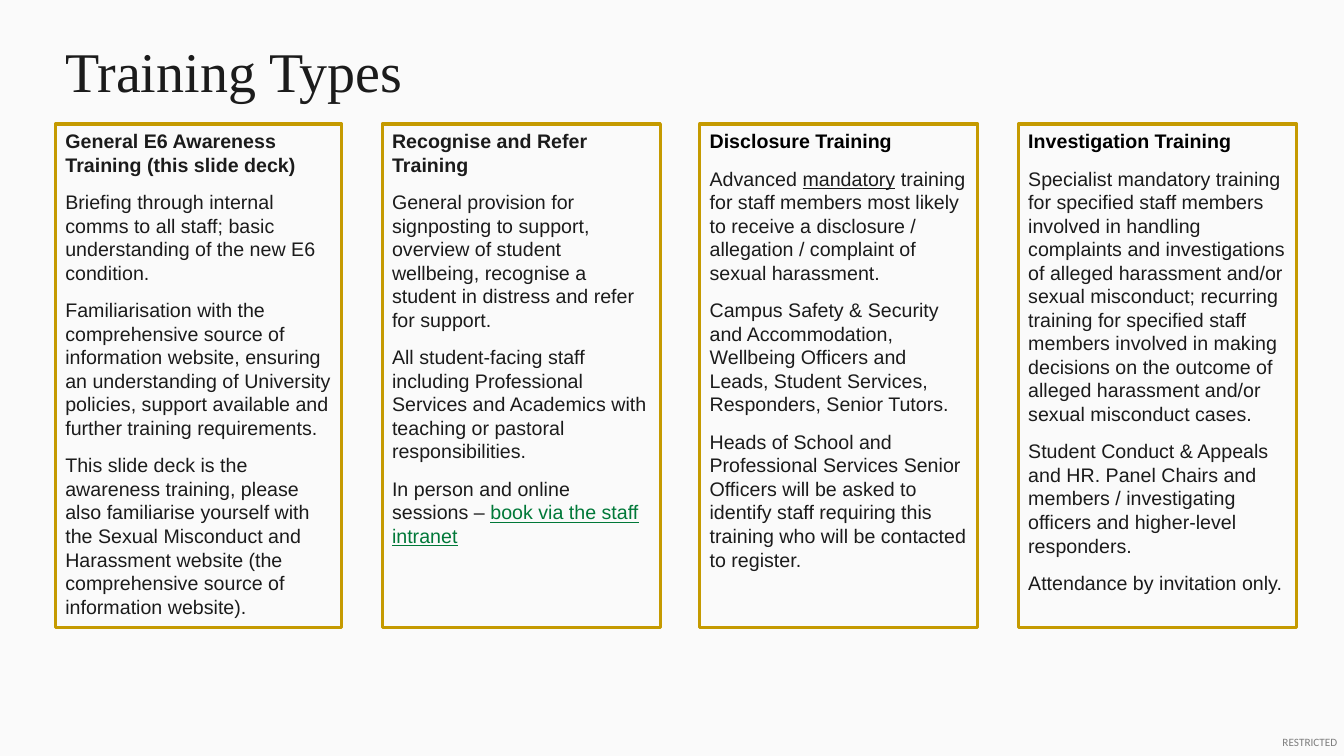
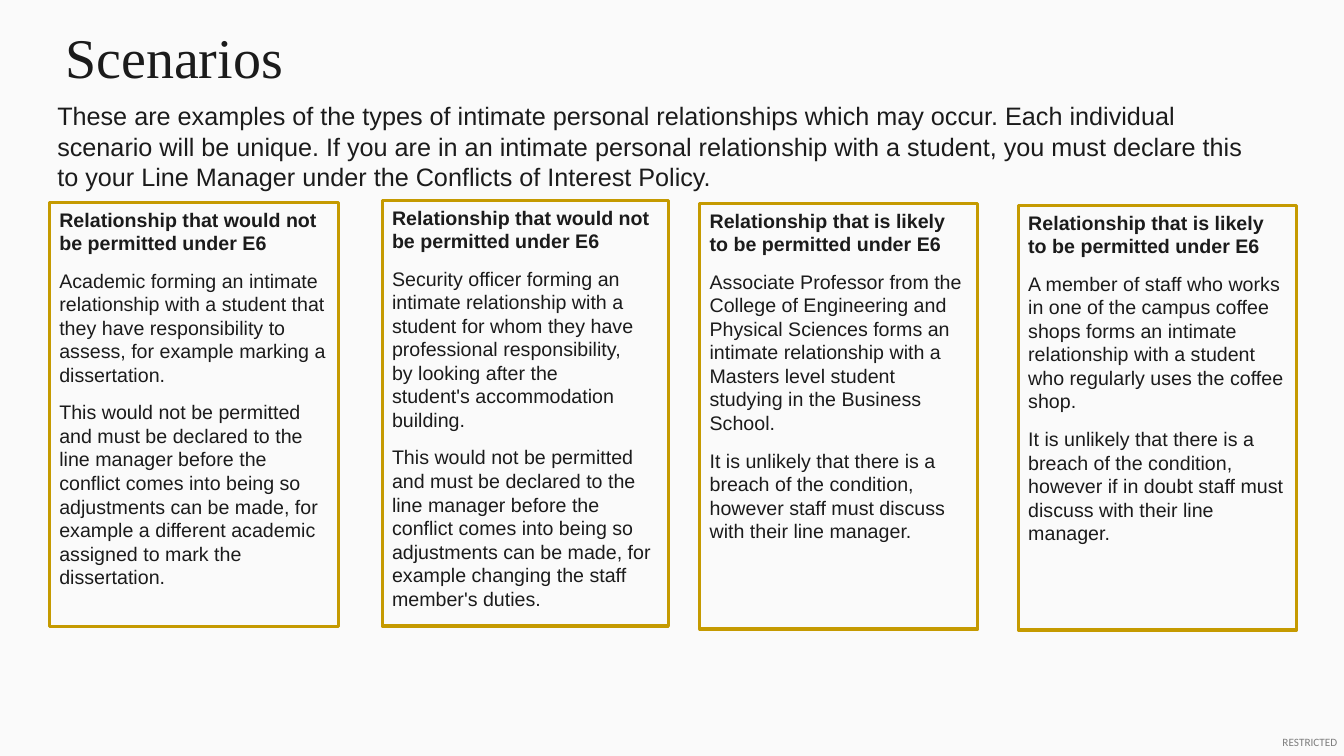
from pptx import Presentation
from pptx.dml.color import RGBColor
from pptx.enum.shapes import MSO_SHAPE
from pptx.enum.text import MSO_ANCHOR, PP_ALIGN
from pptx.util import Inches, Pt

COLORS = {
    "paper": "FAFAFA",
    "ink": "1B1B1B",
    "black": "000000",
    "gold": "C59A00",
    "link": "007838",
    "footer": "7D7D7D",
}
BODY_FONT = "Arial"
TITLE_FONT = "Times New Roman"
FOOTER_FONT = "Calibri"

TRAINING_CARDS = [
    ((0.55, 1.23, 2.84, 5), "ink", "General E6 Awareness Training (this slide deck)", [
        "Briefing through internal comms to all staff; basic understanding of the new E6 condition.",
        "Familiarisation with the comprehensive source of information website, ensuring an "
        "understanding of University policies, support available and further training requirements.",
        "This slide deck is the awareness training, please also familiarise yourself with the Sexual "
        "Misconduct and Harassment website (the comprehensive source of information website).",
    ]),
    ((3.79, 1.23, 2.76, 5), "ink", "Recognise and Refer Training", [
        "General provision for signposting to support, overview of student wellbeing, recognise a "
        "student in distress and refer for support.",
        "All student-facing staff including Professional Services and Academics with teaching or "
        "pastoral responsibilities.",
        [("In person and online sessions – ", None), ("book via the staff intranet", "link")],
    ]),
    ((6.94, 1.23, 2.76, 5), "black", "Disclosure Training", [
        [("Advanced ", None), ("mandatory", "ink"),
         (" training for staff members most likely to receive a disclosure / allegation / complaint "
          "of sexual harassment.", None)],
        "Campus Safety & Security and Accommodation, Wellbeing Officers and Leads, Student Services, "
        "Responders, Senior Tutors.",
        "Heads of School and Professional Services Senior Officers will be asked to identify staff "
        "requiring this training who will be contacted to register.",
    ]),
    ((10.1, 1.23, 2.76, 5), "black", "Investigation Training", [
        "Specialist mandatory training for specified staff members involved in handling complaints and "
        "investigations of alleged harassment and/or sexual misconduct; recurring training for "
        "specified staff members involved in making decisions on the outcome of alleged harassment "
        "and/or sexual misconduct cases.",
        "Student Conduct & Appeals and HR. Panel Chairs and members / investigating officers and "
        "higher-level responders.",
        "Attendance by invitation only.",
    ]),
]

NOT_PERMITTED = "Relationship that would not be permitted under E6"
LIKELY_PERMITTED = "Relationship that is likely to be permitted under E6"
DECLARE = ("This would not be permitted and must be declared to the line manager before the conflict "
           "comes into being so adjustments can be made, for example ")
UNLIKELY = "It is unlikely that there is a breach of the condition, however "
NO_BREAK_SPACE = chr(160)

SCENARIO_INTRO = (
    "These are examples of the types of intimate personal relationships which may occur. Each "
    "individual scenario will be unique. If you are in an intimate personal relationship with a "
    "student, you must declare this to your Line Manager under the Conflicts of Interest Policy."
)
SCENARIO_CARDS = [
    ((0.49, 2.01, 2.87, 4.21), "ink", NOT_PERMITTED, [
        "Academic forming an intimate relationship with a student that they have responsibility to "
        "assess, for example marking a dissertation.",
        DECLARE + "a different academic assigned to mark the dissertation.",
    ]),
    ((3.79, 1.99, 2.84, 4.22), "ink", NOT_PERMITTED, [
        "Security officer forming an intimate relationship with a student for whom they have "
        f"professional responsibility, by{NO_BREAK_SPACE}looking after the "
        f"student's{NO_BREAK_SPACE}accommodation building.",
        DECLARE + "changing the staff member's duties.",
    ]),
    ((6.94, 2.02, 2.76, 4.22), "ink", LIKELY_PERMITTED, [
        "Associate Professor from the College of Engineering and Physical Sciences forms an intimate "
        "relationship with a Masters level student studying in the Business School.",
        UNLIKELY + "staff must discuss with their line manager.",
    ]),
    ((10.1, 2.04, 2.76, 4.21), "ink", LIKELY_PERMITTED, [
        "A member of staff who works in one of the campus coffee shops forms an intimate relationship "
        "with a student who regularly uses the coffee shop.",
        UNLIKELY + "if in doubt staff must discuss with their line manager.",
    ]),
]


def rgb(name):
    return RGBColor.from_string(COLORS[name])


def style(p, font, size, color, bold=False):
    p.font.name = font
    p.font.size = Pt(size)
    p.font.bold = bold
    p.font.color.rgb = rgb(color)


def add_text(s, box, text, font, size, color):
    tf = s.shapes.add_textbox(*map(Inches, box)).text_frame
    tf.word_wrap = True
    p = tf.paragraphs[0]
    p.text = text
    style(p, font, size, color)
    return tf


def add_card(s, box, heading_color, heading, body):
    sp = s.shapes.add_shape(MSO_SHAPE.RECTANGLE, *map(Inches, box))
    sp.shadow.inherit = False
    sp.fill.background()
    sp.line.color.rgb = rgb("gold")
    sp.line.width = Pt(2.25)
    tf = sp.text_frame
    tf.word_wrap = True
    tf.vertical_anchor = MSO_ANCHOR.TOP
    for i, content in enumerate([heading, *body]):
        p = tf.add_paragraph() if i else tf.paragraphs[0]
        p.alignment = PP_ALIGN.LEFT
        if i:
            p.space_before = Pt(10)
        style(p, BODY_FONT, 14, "ink" if i else heading_color, not i)
        runs = [(content, None)] if isinstance(content, str) else content
        for text, underline_color in runs:
            r = p.add_run()
            r.text = text
            if underline_color:
                r.font.underline = True
                r.font.color.rgb = rgb(underline_color)


def add_card_slide(prs, title, title_top, cards, intro=None):
    s = prs.slides.add_slide(prs.slide_layouts[6])
    footer = add_text(s, (12.72, 7.3, 0.57, 0.13), "RESTRICTED", FOOTER_FONT, 8, "footer")
    footer.word_wrap = False
    footer.margin_left = footer.margin_right = footer.margin_top = footer.margin_bottom = 0
    heading = add_text(s, (0.55, title_top, 10.85, 0.52), title, TITLE_FONT, 40, "ink")
    heading.paragraphs[0].line_spacing = 0.9
    heading.vertical_anchor = MSO_ANCHOR.MIDDLE
    if intro:
        add_text(s, (0.47, 0.95, 12.16, 1.01), intro, BODY_FONT, 18, "ink")
    for card in cards:
        add_card(s, *card)


def main():
    prs = Presentation()
    prs.slide_width = Inches(13.33)
    prs.slide_height = Inches(7.5)
    fill = prs.slide_master.background.fill
    fill.solid()
    fill.fore_color.rgb = rgb("paper")
    add_card_slide(prs, "Training Types", 0.48, TRAINING_CARDS)
    add_card_slide(prs, "Scenarios", 0.34, SCENARIO_CARDS, SCENARIO_INTRO)
    prs.save("out.pptx")


if __name__ == "__main__":
    main()
